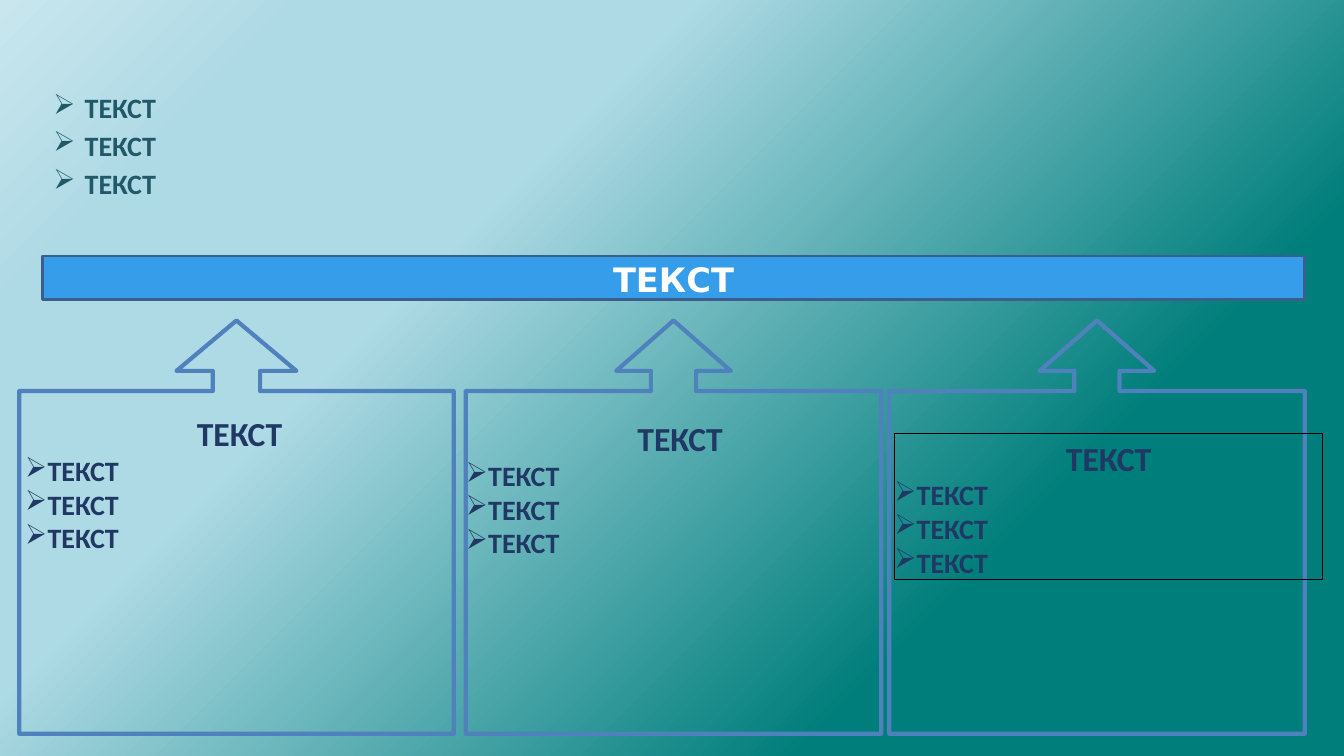
from lxml import etree
from pptx import Presentation, util as u
from pptx.dml.color import RGBColor
from pptx.enum import shapes, text
from pptx.oxml import ns

WIDTH, HEIGHT = 13.33, 7.5
WORD = "ТЕКСТ"
NAVY, TEAL, WHITE, BLUE = "203864", "215968", "FFFFFF", "4F81BD"
GRADIENT = [(26, "007E7B"), (67, "AEDAE5"), (85, "AEDAE5"), (100, "C9E6EE")]
ARROW_TOP, HEAD_BOTTOM, CARD_TOP, CARD_BOTTOM = 3.18, 3.68, 3.88, 7.28
HEAD_SHARE, SHAFT_SHARE = 0.138, 0.0545
# card left, card width, text left, text top, text outline
COLUMNS = [
    (0.19, 4.31, 0.25, 4.06, None),
    (4.62, 4.12, 4.62, 4.11, None),
    (8.82, 4.12, 8.87, 4.30, "000000"),
]


def color(value):
    return RGBColor.from_string(value)


def paint_background(slide):
    fill = slide.background.fill
    fill.gradient()
    fill.gradient_angle = 135
    stops = slide.element.find(".//" + ns.qn("a:gsLst"))
    for stop in list(stops):
        stops.remove(stop)
    for position, value in GRADIENT:
        stop = etree.SubElement(stops, ns.qn("a:gs"), pos=str(position * 1000))
        etree.SubElement(stop, ns.qn("a:srgbClr"), val=value)


def style(shape, fill=None, line=None, weight=1):
    shape.shadow.inherit = False
    if fill:
        shape.fill.solid()
        shape.fill.fore_color.rgb = color(fill)
    else:
        shape.fill.background()
    if line:
        shape.line.color.rgb = color(line)
        shape.line.width = u.Pt(weight)
    else:
        shape.line.fill.background()


def add_panel(slide, left, top, width, height, inset, **look):
    """Add a rectangle whose text starts at its top edge."""
    panel = slide.shapes.add_shape(
        shapes.MSO_SHAPE.RECTANGLE, *map(u.Inches, (left, top, width, height)))
    style(panel, **look)
    frame = panel.text_frame
    frame.word_wrap = True
    frame.auto_size = text.MSO_AUTO_SIZE.SHAPE_TO_FIT_TEXT
    frame.vertical_anchor = text.MSO_ANCHOR.TOP
    frame.margin_left = frame.margin_right = frame.margin_bottom = 0
    frame.margin_top = u.Inches(inset)
    return frame


def write(frame, words, size=20, ink=NAVY, font="Calibri", centered=False,
          bullet=False, hanging=None, before=0, spacing=None):
    """Write one paragraph, using the frame's first one while it is empty."""
    first = frame.paragraphs[0]
    paragraph = frame.add_paragraph() if first.runs else first
    paragraph.alignment = text.PP_ALIGN.CENTER if centered else text.PP_ALIGN.LEFT
    paragraph.space_before = u.Pt(before)
    if spacing:
        paragraph.line_spacing = u.Pt(spacing)
    properties = paragraph._p.get_or_add_pPr()
    if hanging:
        margin, indent = hanging
        properties.set("marL", str(u.Inches(margin)))
        properties.set("indent", str(u.Inches(indent)))
    if bullet:
        etree.SubElement(properties, ns.qn("a:buChar"), char="➢")
    run = paragraph.add_run()
    run.text = words
    run.font.size = u.Pt(size)
    run.font.name = font
    run.font.bold = True
    run.font.color.rgb = color(ink)


def add_arrow_card(slide, left, width):
    """Outline a card with an upward arrow growing from its top."""
    right, middle = left + width, left + width / 2
    head, shaft = width * HEAD_SHARE, width * SHAFT_SHARE
    outline = [
        (left, CARD_TOP),
        (middle - shaft, CARD_TOP), (middle - shaft, HEAD_BOTTOM),
        (middle - head, HEAD_BOTTOM), (middle, ARROW_TOP),
        (middle + head, HEAD_BOTTOM), (middle + shaft, HEAD_BOTTOM),
        (middle + shaft, CARD_TOP), (right, CARD_TOP),
        (right, CARD_BOTTOM), (left, CARD_BOTTOM),
    ]
    start, *rest = [(u.Inches(x), u.Inches(y)) for x, y in outline]
    builder = slide.shapes.build_freeform(*start)
    builder.add_line_segments(rest, close=True)
    style(builder.convert_to_shape(), line=BLUE, weight=3)


def add_card_text(slide, left, top, line):
    frame = add_panel(slide, left, top, 4.25, 1.45, 0.04, line=line, weight=0.75)
    write(frame, WORD, size=24, centered=True)
    for _ in range(3):
        write(frame, WORD, bullet=True)


def main():
    deck = Presentation()
    deck.slide_width, deck.slide_height = u.Inches(WIDTH), u.Inches(HEIGHT)
    slide = deck.slides.add_slide(deck.slide_layouts[6])
    paint_background(slide)

    intro = add_panel(slide, 0.51, 0.86, 11.91, 1.14, 0.01)
    for _ in range(3):
        write(intro, WORD, ink=TEAL, bullet=True, hanging=(0.33, -0.31),
              before=1, spacing=26.1)

    banner = add_panel(slide, 0.42, 2.54, 12.52, 0.43, 0.03,
                       fill="369DEA", line="3A5F8C", weight=2)
    write(banner, WORD, size=24, ink=WHITE, font="DejaVu Sans",
          centered=True, before=2.1)

    for card_left, card_width, text_left, text_top, line in COLUMNS:
        add_arrow_card(slide, card_left, card_width)
        add_card_text(slide, text_left, text_top, line)

    deck.save("out.pptx")


if __name__ == "__main__":
    main()
